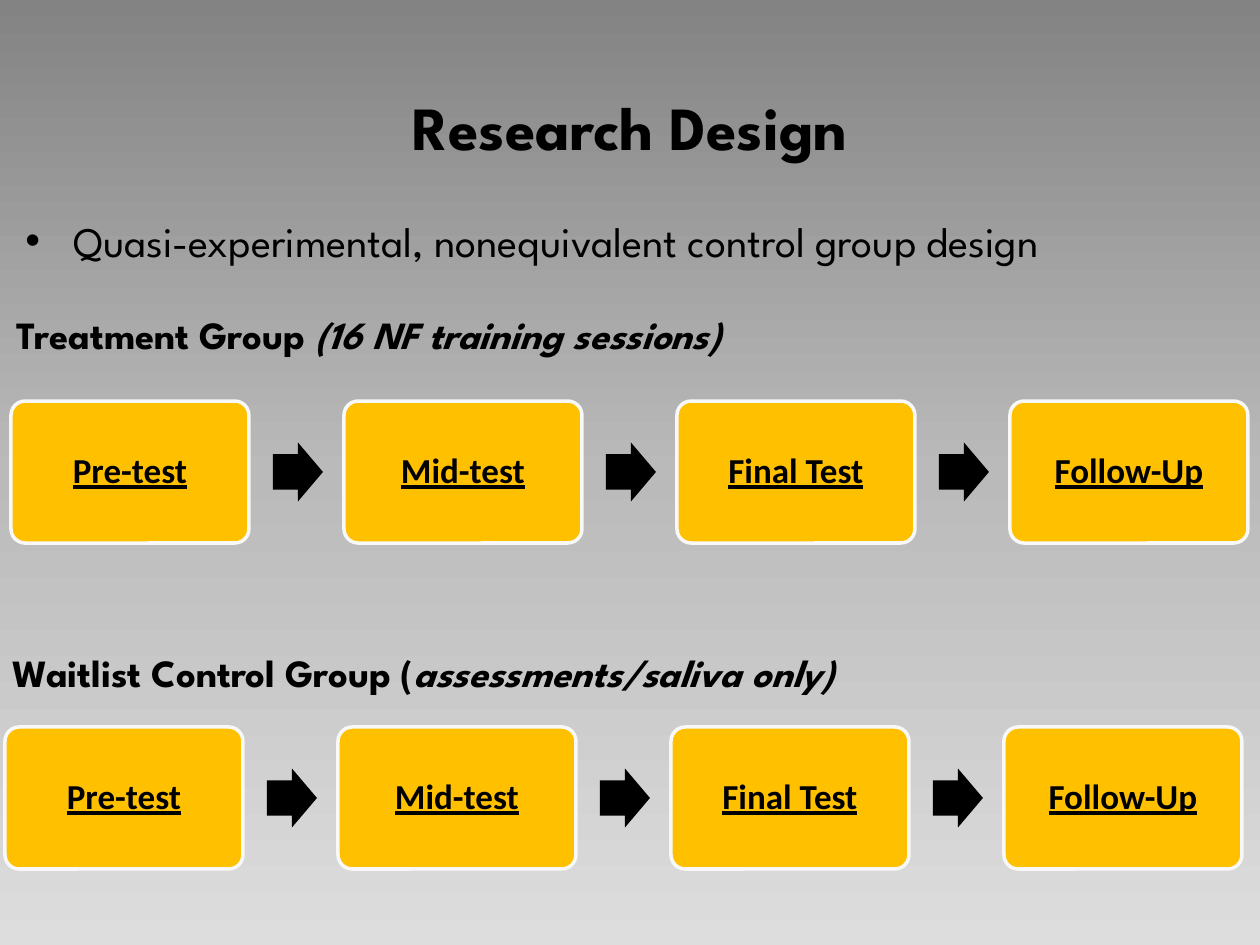
from copy import deepcopy

from lxml import etree
from pptx import Presentation
from pptx.dml.color import RGBColor
from pptx.enum.shapes import MSO_SHAPE
from pptx.enum.text import MSO_ANCHOR, PP_ALIGN
from pptx.oxml.ns import qn
from pptx.util import Emu, Pt

PX_PER_INCH = 126
BLACK = RGBColor(0x00, 0x00, 0x00)
AMBER = RGBColor(0xFF, 0xC0, 0x00)
OFF_WHITE = RGBColor(0xF8, 0xF8, 0xF8)
BACKGROUND = [
    (0, RGBColor(0x83, 0x83, 0x83)),
    (0.5, RGBColor(0xBA, 0xBA, 0xBA)),
    (1, RGBColor(0xDD, 0xDD, 0xDD)),
]
HEADING_FONT = "League Spartan"
BOX_FONT = "Calibri"

STAGES = ["Pre-test", "Mid-test", "Final Test", "Follow-Up"]
STAGE_PITCH = 333
STAGE_W, STAGE_H = 238, 142
ARROW_OFFSET = 262
ARROW_W, ARROW_H = 50, 59


def px(n):
    return Emu(round(n * 914400 / PX_PER_INCH))


def set_background(s):
    """Fill the slide with a three-stop gradient, dark at the top."""
    fill = s.background.fill
    fill.gradient()
    fill.gradient_angle = 270
    stops = s.element.find(".//" + qn("a:gsLst"))
    stops.append(deepcopy(stops[-1]))
    for stop, (position, color) in zip(fill.gradient_stops, BACKGROUND):
        stop.position = position
        stop.color.rgb = color


def add_run(p, text, **font):
    r = p.add_run()
    r.text = text
    r.font.color.rgb = BLACK
    for name, value in font.items():
        setattr(r.font, name, value)


def add_text(s, left, top, width, height, runs, size):
    """Add a one-paragraph text box; runs are (text, font format) pairs."""
    tf = s.shapes.add_textbox(px(left), px(top), px(width), px(height)).text_frame
    tf.word_wrap = True
    p = tf.paragraphs[0]
    for text, font in runs:
        add_run(p, text, name=HEADING_FONT, size=Pt(size), **font)
    return tf


def add_title(s, text):
    tf = add_text(s, 63, 84, 1134, 84, [(text, {"bold": True})], 35)
    tf.vertical_anchor = MSO_ANCHOR.MIDDLE
    tf.paragraphs[0].alignment = PP_ALIGN.CENTER


def add_bullet(s, text):
    tf = add_text(s, 13, 209, 1240, 74, [(text, {})], 24)
    pPr = tf.paragraphs[0]._p.get_or_add_pPr()
    pPr.set("marL", str(px(48)))
    pPr.set("indent", str(-px(48)))
    etree.SubElement(pPr, qn("a:buFont"), typeface="Arial")
    etree.SubElement(pPr, qn("a:buChar"), char="•")


def add_group_label(s, left, top, width, name, detail):
    runs = [(name, {"bold": True}), (detail, {"bold": True, "italic": True})]
    add_text(s, left, top, width, 59, runs, 22)


def add_solid(shapes, preset, left, top, width, height, color, adjustments):
    sp = shapes.add_shape(preset, px(left), px(top), px(width), px(height))
    sp.shadow.inherit = False
    sp.fill.solid()
    sp.fill.fore_color.rgb = color
    sp.line.fill.background()
    for i, value in enumerate(adjustments):
        sp.adjustments[i] = value
    return sp


def add_stage(shapes, left, top, text):
    sp = add_solid(shapes, MSO_SHAPE.ROUNDED_RECTANGLE, left, top,
                   STAGE_W, STAGE_H, AMBER, [0.1])
    sp.line.color.rgb = OFF_WHITE
    sp.line.width = Pt(2)
    tf = sp.text_frame
    tf.word_wrap = True
    tf.vertical_anchor = MSO_ANCHOR.MIDDLE
    p = tf.paragraphs[0]
    p.alignment = PP_ALIGN.CENTER
    p.line_spacing = 0.9
    add_run(p, text, name=BOX_FONT, size=Pt(20), bold=True, underline=True)


def add_process(s, left, top):
    """Add one row of stages with an arrow between neighbours."""
    shapes = s.shapes.add_group_shape().shapes
    for i, stage in enumerate(STAGES):
        x = left + i * STAGE_PITCH
        add_stage(shapes, x, top, stage)
        if i < len(STAGES) - 1:
            add_solid(shapes, MSO_SHAPE.RIGHT_ARROW, x + ARROW_OFFSET,
                      top + (STAGE_H - ARROW_H) / 2, ARROW_W, ARROW_H,
                      BLACK, [0.6, 0.5])


def main():
    prs = Presentation()
    prs.slide_width, prs.slide_height = px(1260), px(945)
    s = prs.slides.add_slide(prs.slide_layouts[6])
    set_background(s)
    add_title(s, "Research Design")
    add_bullet(s, "Quasi-experimental, nonequivalent control group design")
    add_process(s, 11, 401)
    add_process(s, 5, 727)
    add_group_label(s, 4, 305, 825, "Treatment Group ", "(16 NF training sessions)")
    add_group_label(s, 0, 643, 945, "Waitlist Control Group (", "assessments/saliva only)")
    prs.save("out.pptx")


if __name__ == "__main__":
    main()
